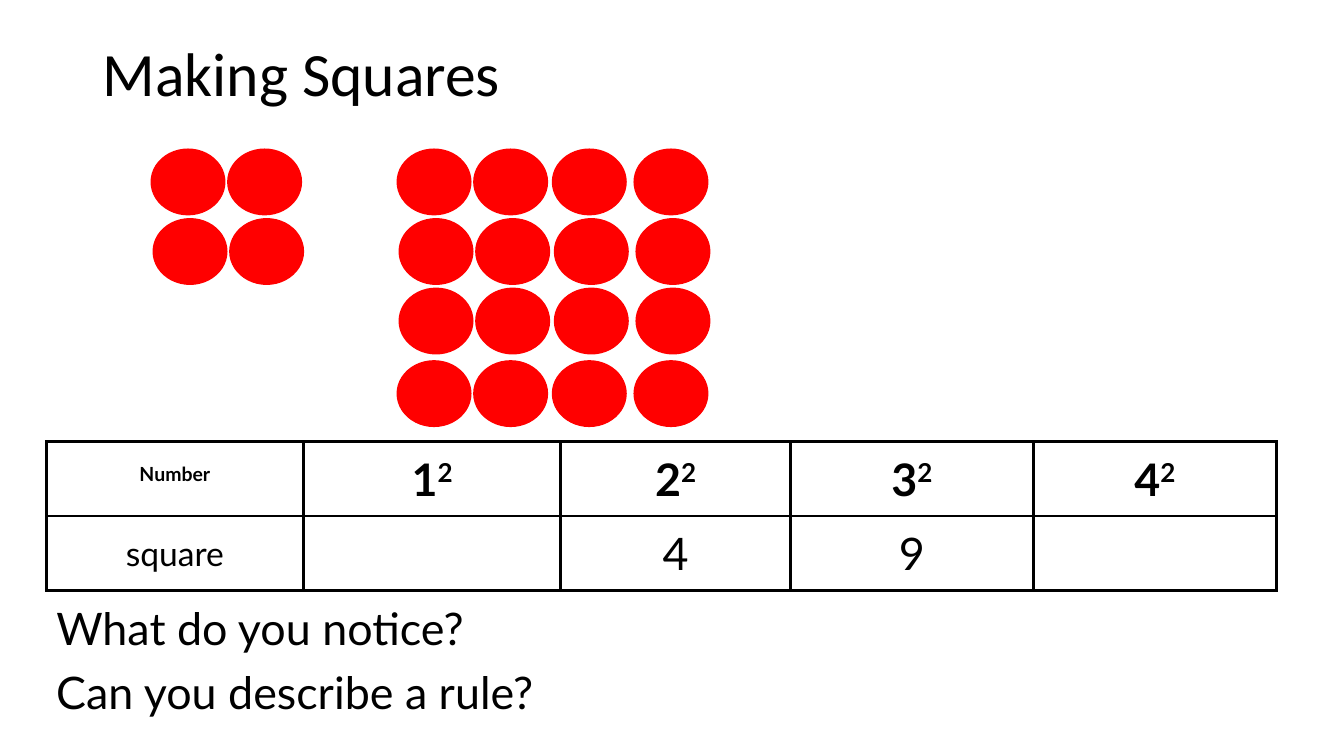
from dataclasses import dataclass

from lxml.etree import SubElement
from pptx import Presentation
from pptx.dml.color import RGBColor
from pptx.enum.shapes import MSO_SHAPE
from pptx.enum.text import MSO_ANCHOR, PP_ALIGN
from pptx.oxml.ns import qn
from pptx.util import Pt

EMU_PER_PX = 9144


@dataclass(frozen=True)
class Theme:
    """Colours, fonts and type sizes of the slide."""

    ink: RGBColor = RGBColor(0, 0, 0)
    paper: RGBColor = RGBColor(255, 255, 255)
    counter: RGBColor = RGBColor(255, 0, 0)
    title_font: str = "Calibri"
    body_font: str = "Lato"
    title_size: int = 44
    body_size: int = 32
    label_size: int = 24
    counter_line: float = 1
    border: float = 2.25


def px(*lengths):
    """Turn pixel lengths into EMU."""
    return [length * EMU_PER_PX for length in lengths]


class SlideBuilder:
    """Draws styled elements on one slide."""

    def __init__(self, slide, theme):
        """Keep the slide and its theme."""
        self.slide = slide
        self.theme = theme

    def add_text_run(self, paragraph, text, size, font=None, bold=False, superscript=False):
        """Add one formatted run to a paragraph."""
        run = paragraph.add_run()
        run.text = text
        formats = {"name": font or self.theme.body_font, "size": Pt(size), "bold": bold}
        for name, value in formats.items():
            setattr(run.font, name, value)
        run.font.color.rgb = self.theme.ink
        if superscript:
            run.font._element.set("baseline", "30000")

    def text(self, box, text, size, font=None, anchor=MSO_ANCHOR.TOP, line_spacing=1.0):
        """Add a wrapped text box."""
        frame = self.slide.shapes.add_textbox(*px(*box)).text_frame
        for name, value in {"word_wrap": True, "vertical_anchor": anchor}.items():
            setattr(frame, name, value)
        frame.paragraphs[0].line_spacing = line_spacing
        self.add_text_run(frame.paragraphs[0], text, size, font)

    def counter(self, left, top):
        """Add one round counter."""
        shape = self.slide.shapes.add_shape(MSO_SHAPE.OVAL, *px(left, top, 73, 65))
        shape.shadow.inherit = False
        shape.fill.solid()
        shape.fill.fore_color.rgb = self.theme.counter
        shape.line.color.rgb = self.theme.counter
        shape.line.width = Pt(self.theme.counter_line)

    def counters(self, lefts, rows):
        """Add a grid of counters from column lefts and (top, shift) rows."""
        for top, shift in rows:
            for left in lefts:
                self.counter(left + shift, top)

    def cell(self, cell, runs):
        """Fill, border and letter one table cell."""
        cell.fill.solid()
        cell.fill.fore_color.rgb = self.theme.paper
        cell.vertical_anchor = MSO_ANCHOR.MIDDLE
        properties = cell._tc.get_or_add_tcPr()
        for position, side in enumerate(("lnL", "lnR", "lnT", "lnB")):
            line = SubElement(properties, qn(f"a:{side}"), w=str(Pt(self.theme.border)))
            fill = SubElement(line, qn("a:solidFill"))
            SubElement(fill, qn("a:srgbClr"), val=str(self.theme.ink))
            properties.insert(position, line)
        paragraph = cell.text_frame.paragraphs[0]
        paragraph.alignment = PP_ALIGN.CENTER
        for run in runs:
            self.add_text_run(paragraph, **run)

    def table(self, left, top, widths, row_height, rows):
        """Add a bordered table whose cells are lists of runs."""
        box = px(left, top, sum(widths), row_height * len(rows))
        table = self.slide.shapes.add_table(len(rows), len(widths), *box).table
        for name in ("first_row", "horz_banding"):
            setattr(table, name, False)
        for column, width in zip(table.columns, px(*widths)):
            column.width = width
        for row, contents in zip(table.rows, rows):
            row.height = row_height * EMU_PER_PX
            for cell, runs in zip(row.cells, contents):
                self.cell(cell, runs)


def main():
    """Build and save the slide."""
    theme = Theme()
    presentation = Presentation()
    presentation.slide_width, presentation.slide_height = px(1333, 750)
    slide = presentation.slides.add_slide(presentation.slide_layouts[6])
    builder = SlideBuilder(slide, theme)

    builder.text((92, 3, 1150, 145), "Making Squares", theme.title_size,
                 theme.title_font, MSO_ANCHOR.MIDDLE, 0.9)
    builder.counters((150, 226), ((148, 0), (217, 2)))
    builder.counters((394, 470, 548, 629), ((148, 0), (217, 2), (286, 2), (358, 0)))

    number = {"text": "Number", "size": theme.label_size, "bold": True, "superscript": True}
    square = {"text": "square", "size": theme.label_size}
    power = {"text": "2", "size": theme.body_size, "bold": True, "superscript": True}
    powers = [[{"text": base, "size": theme.body_size, "bold": True}, power] for base in "1234"]
    squares = [[{"text": value, "size": theme.body_size}] if value else []
               for value in ("", "4", "9", "")]
    builder.table(46, 438, (255, 255, 228, 241, 241), 74,
                  [[[number], *powers], [[square], *squares]])

    builder.text((46, 591, 442, 64), "What do you notice?", theme.body_size)
    builder.text((46, 655, 600, 64), "Can you describe a rule?", theme.body_size)
    presentation.save("out.pptx")


if __name__ == "__main__":
    main()
